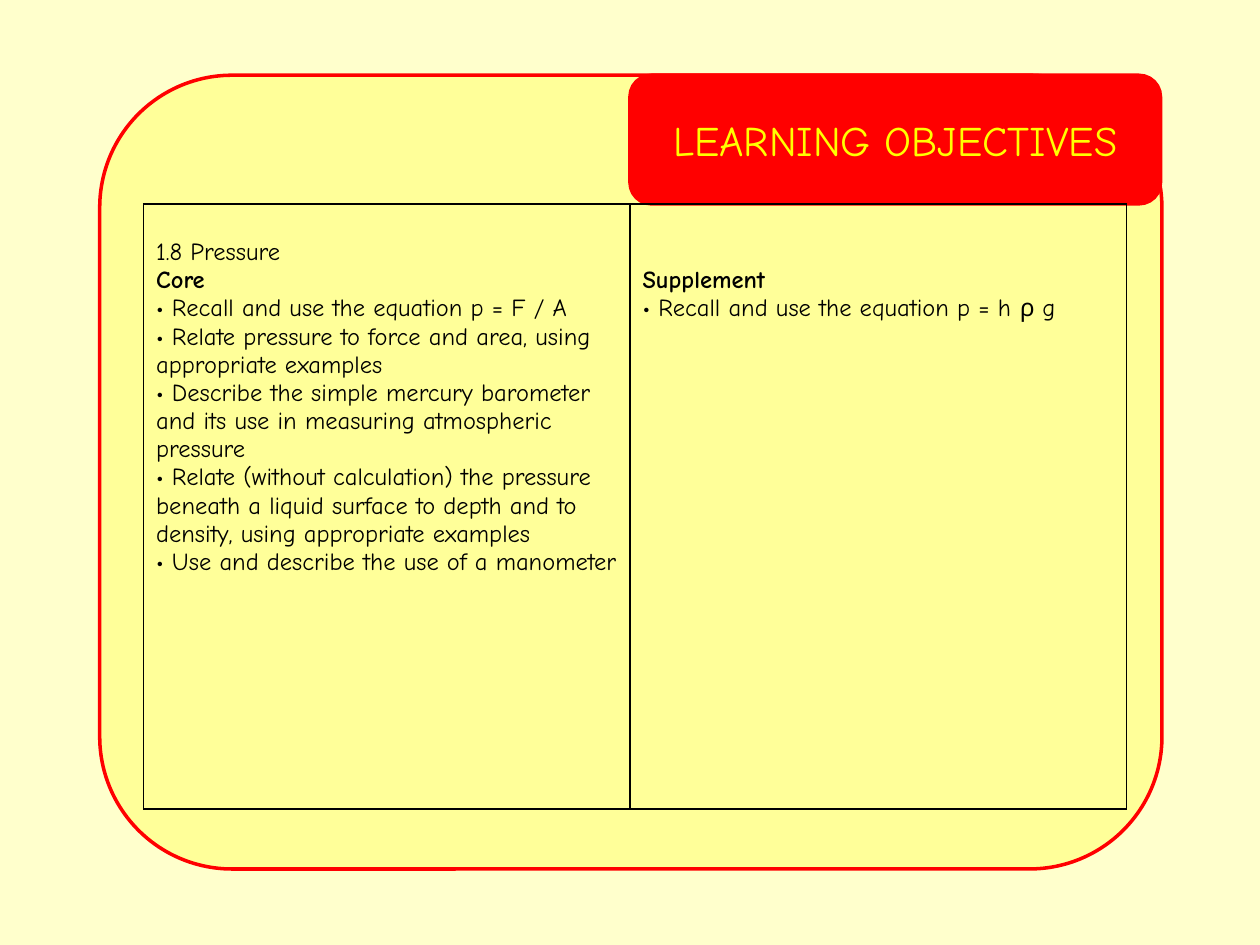
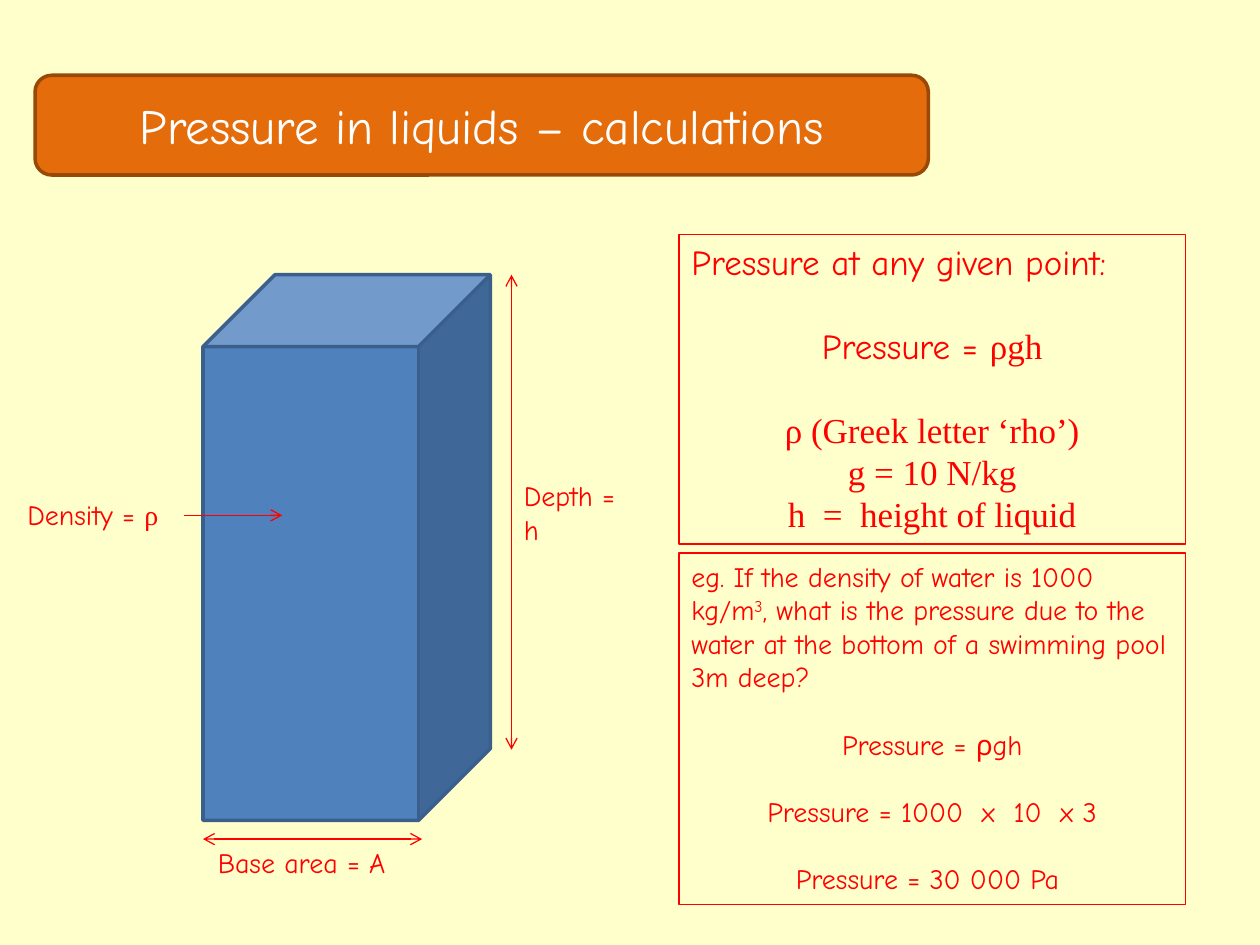
from dataclasses import dataclass
from typing import Optional

from lxml import etree
from pptx import Presentation
from pptx.dml.color import RGBColor
from pptx.enum.shapes import MSO_CONNECTOR, MSO_SHAPE
from pptx.enum.text import MSO_ANCHOR, MSO_AUTO_SIZE, PP_ALIGN
from pptx.oxml.ns import qn
from pptx.util import Pt

RECT, ROUND, CUBE = MSO_SHAPE.RECTANGLE, MSO_SHAPE.ROUNDED_RECTANGLE, MSO_SHAPE.CUBE
LEFT, MID = PP_ALIGN.LEFT, PP_ALIGN.CENTER
TOP, CENTRE = MSO_ANCHOR.TOP, MSO_ANCHOR.MIDDLE
GROW = MSO_AUTO_SIZE.SHAPE_TO_FIT_TEXT
STRAIGHT = MSO_CONNECTOR.STRAIGHT

WIDE, HIGH = 720, 540
BAND_TOP = 43
COMIC, TIMES = "Comic Neue", "Times New Roman"
COLOURS = {
    "page": "FFFFCC", "panel": "FFFF99", "red": "FF0000", "yellow": "FFFF00",
    "orange": "E46C0A", "brown": "984807", "white": "FFFFFF", "black": "000000",
    "blue": "4F81BD", "navy": "3A5F8C",
}


@dataclass
class Box:
    left: float
    top: float
    width: float
    height: float
    kind: int = RECT
    fill: Optional[str] = None
    line: Optional[str] = None
    weight: float = 2


@dataclass
class Run:
    text: str
    face: str = COMIC
    bold: bool = False
    raised: bool = False


@dataclass
class Para:
    runs: list[Run]
    align: int = LEFT
    gap: float = 0


@dataclass
class Band:
    box: Box
    title: str
    size: float
    colour: str


@dataclass
class Label:
    left: float
    top: float
    width: float
    height: float
    runs: list[Run]


@dataclass
class Arrow:
    start: tuple[float, float]
    end: tuple[float, float]
    ends: tuple[str, ...] = ("headEnd", "tailEnd")


def rgb(name: str) -> RGBColor:
    return RGBColor.from_string(COLOURS[name])


def plain(text: str, align: int = LEFT, gap: float = 0, **style) -> Para:
    """Make a paragraph of one run."""
    return Para([Run(text, **style)], align, gap)


def write(frame, paras: list[Para], size: float, colour: str) -> None:
    for i, para in enumerate(paras):
        line = frame.add_paragraph() if i else frame.paragraphs[0]
        line.alignment = para.align
        line.space_before = Pt(para.gap)
        for part in para.runs:
            run = line.add_run()
            run.text = part.text
            form = {"name": part.face, "size": Pt(size), "bold": part.bold}
            for key, value in form.items():
                setattr(run.font, key, value)
            run.font.color.rgb = rgb(colour)
            if part.raised:
                run._r.get_or_add_rPr().set("baseline", "30000")


def draw(slide, box: Box):
    spot = map(Pt, (box.left, box.top, box.width, box.height))
    shape = slide.shapes.add_shape(box.kind, *spot)
    shape.shadow.inherit = False
    if box.fill:
        shape.fill.solid()
        shape.fill.fore_color.rgb = rgb(box.fill)
    else:
        shape.fill.background()
    if box.line:
        shape.line.color.rgb = rgb(box.line)
        shape.line.width = Pt(box.weight)
    else:
        shape.line.fill.background()
    return shape


def set_frame(frame, **form) -> None:
    for key, value in {"word_wrap": True, **form}.items():
        setattr(frame, key, value)


def draw_band(slide, band: Band) -> None:
    frame = draw(slide, band.box).text_frame
    set_frame(frame, vertical_anchor=CENTRE)
    write(frame, [plain(band.title, MID)], band.size, band.colour)


def draw_note(slide, box: Box, paras: list[Para], size: float) -> None:
    frame = draw(slide, box).text_frame
    set_frame(frame, vertical_anchor=TOP, auto_size=GROW)
    write(frame, paras, size, "red")


def draw_label(slide, label: Label) -> None:
    spot = map(Pt, (label.left, label.top, label.width, label.height))
    frame = slide.shapes.add_textbox(*spot).text_frame
    set_frame(frame, auto_size=GROW)
    write(frame, [Para(label.runs)], 16, "red")


def draw_arrow(slide, arrow: Arrow) -> None:
    spot = map(Pt, arrow.start + arrow.end)
    link = slide.shapes.add_connector(STRAIGHT, *spot)
    link.line.color.rgb = rgb("red")
    link.line.width = Pt(0.75)
    props = link._element.spPr
    for end in arrow.ends:
        etree.SubElement(props.find(qn("a:ln")), qn(f"a:{end}"), type="arrow")
    etree.SubElement(props, qn("a:effectLst"))


def set_edges(cell) -> None:
    """Give all four sides of a cell a thin black line."""
    props = cell._tc.get_or_add_tcPr()
    for i, side in enumerate(("lnL", "lnR", "lnT", "lnB")):
        edge = etree.Element(qn(f"a:{side}"), w=str(Pt(1)))
        fill = etree.SubElement(edge, qn("a:solidFill"))
        etree.SubElement(fill, qn("a:srgbClr"), val=COLOURS["black"])
        props.insert(i, edge)


def add_page(deck, *boxes: Box):
    """Add a blank slide with its ground and any boxes on it."""
    slide = deck.slides.add_slide(deck.slide_layouts[6])
    for box in (Box(0, 0, WIDE, HIGH, fill="page"), *boxes):
        draw(slide, box)
    return slide


def add_goals(deck) -> None:
    slide = add_page(deck, Box(57, BAND_TOP, 607, 453.6, ROUND, "panel", "red"))
    tab = Box(360, BAND_TOP, 303.2, 73.5, ROUND, "red", "red")
    draw_band(slide, Band(tab, "LEARNING OBJECTIVES", 24, "yellow"))

    core = [
        plain("1.8 Pressure"),
        plain("Core", bold=True),
        plain("• Recall and use the equation p = F / A"),
        plain("• Relate pressure to force and area, using appropriate examples"),
        plain("• Describe the simple mercury barometer and its use in "
              "measuring atmospheric pressure"),
        plain("• Relate (without calculation) the pressure beneath a liquid "
              "surface to depth and to density, using appropriate examples"),
        plain("• Use and describe the use of a manometer"),
    ]
    extra = [
        plain("Supplement", bold=True),
        plain("• Recall and use the equation p = h ρ g"),
    ]
    spot = map(Pt, (82, 116.6, 561.6, 345.6))
    table = slide.shapes.add_table(1, 2, *spot).table
    for key in ("first_row", "horz_banding"):
        setattr(table, key, False)
    # Each column: width, lines left free above the text, text
    plan = ((278, 1, core), (283.6, 2, extra))
    for i, (width, skip, paras) in enumerate(plan):
        table.columns[i].width = Pt(width)
        cell = table.cell(0, i)
        cell.fill.background()
        cell.margin_top = Pt(3.6 + 16.1 * skip)
        write(cell.text_frame, paras, 14, "black")
        set_edges(cell)


def add_sums(deck) -> None:
    slide = add_page(deck)
    bar = Box(20, BAND_TOP, 510.5, 57, ROUND, "orange", "brown")
    draw_band(slide, Band(bar, "Pressure in liquids – calculations", 28, "white"))
    draw(slide, Box(116, 157, 164.2, 311.8, CUBE, "blue", "navy"))

    for arrow in (
        Arrow((292.3, 157), (292.3, 428.4)),
        Arrow((116, 479.5), (241.2, 479.5)),
        Arrow((105, 294.5), (161.3, 294.5), ("tailEnd",)),
    ):
        draw_arrow(slide, arrow)
    for label in (
        Label(292.3, 270, 67.7, 46, [Run("Depth = h")]),
        Label(117.4, 479.5, 124, 26.6, [Run("Base area = A")]),
        Label(8.6, 280.8, 108, 26.6, [Run("Density = "), Run("ρ", TIMES)]),
    ):
        draw_label(slide, label)

    rule = [
        plain("Pressure at any given point:"),
        Para([Run("Pressure = "), Run("ρgh", TIMES)], MID, 24),
        plain("ρ (Greek letter ‘rho’)", MID, 24, face=TIMES),
        plain("g = 10 N/kg", MID, face=TIMES),
        plain("h  =  height of liquid", MID, face=TIMES),
    ]
    task = [
        Para([
            Run("eg. If the density of water is 1000 kg/m"),
            Run("3", raised=True),
            Run(", what is the pressure due to the water at the bottom "
                "of a swimming pool 3m deep?"),
        ]),
        plain("Pressure = ρgh", MID, 19.2),
        plain("Pressure = 1000  x  10  x 3", MID, 19.2),
        plain("Pressure = 30 000 Pa ", MID, 19.2),
    ]
    for top, height, paras, size in ((134, 177, rule, 20), (316, 201, task, 16)):
        box = Box(388, top, 289.4, height, line="red", weight=0.75)
        draw_note(slide, box, paras, size)


def main() -> None:
    deck = Presentation()
    deck.slide_width, deck.slide_height = Pt(WIDE), Pt(HIGH)
    add_goals(deck)
    add_sums(deck)
    deck.save("out.pptx")


if __name__ == "__main__":
    main()
